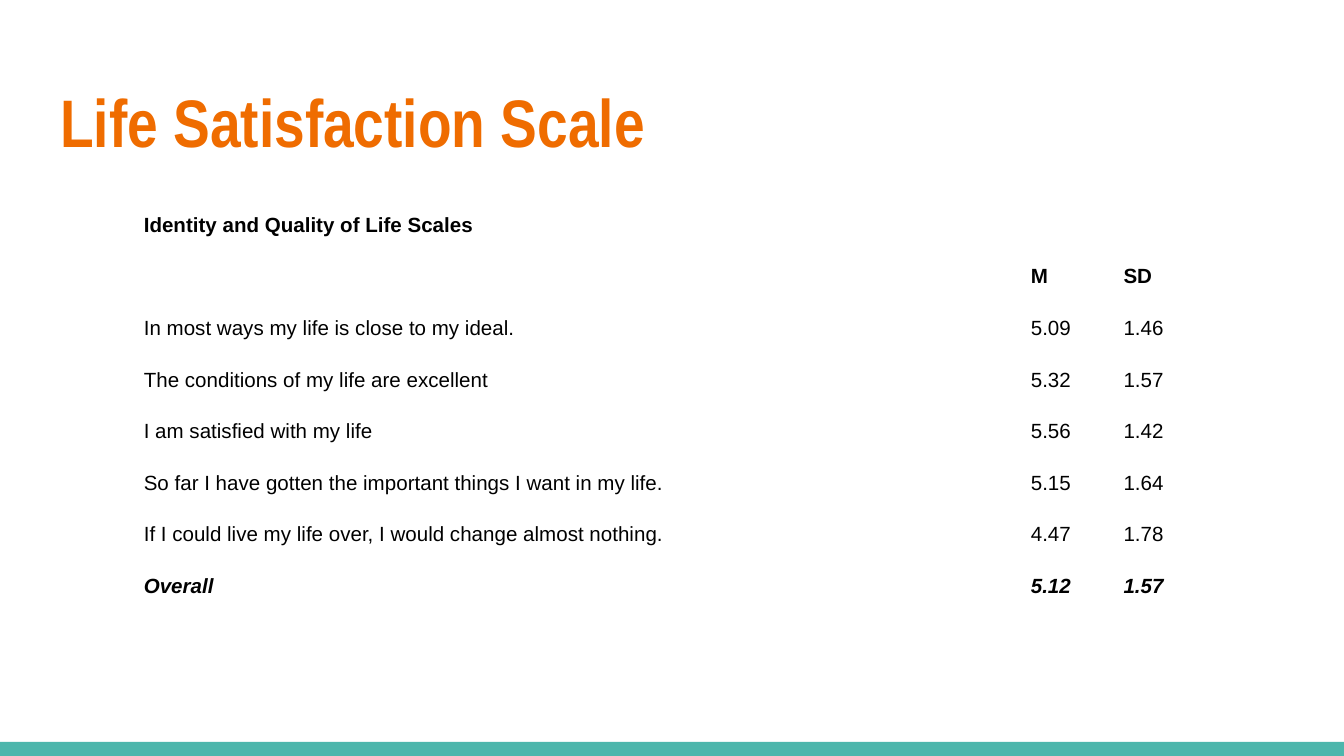
from pptx import Presentation
from pptx.dml.color import RGBColor
from pptx.enum.shapes import MSO_SHAPE as SHAPE
from pptx.enum.text import MSO_ANCHOR as ANCHOR
from pptx.util import Inches, Pt

ORANGE, TEAL, BLACK = "EF6C00", "4DB6AC", "000000"
SIDES = ("left", "top", "right", "bottom")
COLUMN_WIDTHS = (6.6, 0.69, 0.69)
ROW_HEIGHT = 0.27
SCALE_ROWS = [
    ("Identity and Quality of Life Scales", "", ""),
    ("", "M", "SD"),
    ("In most ways my life is close to my ideal.", "5.09", "1.46"),
    ("The conditions of my life are excellent", "5.32", "1.57"),
    ("I am satisfied with my life", "5.56", "1.42"),
    ("So far I have gotten the important things I want in my life.", "5.15", "1.64"),
    ("If I could live my life over, I would change almost nothing.", "4.47", "1.78"),
    ("Overall", "5.12", "1.57"),
]


def rgb(value):
    """Return the colour for a hex string."""
    return RGBColor.from_string(value)


def set_margins(target, size):
    """Give a cell or text frame the same margin on all sides."""
    for side in SIDES:
        setattr(target, f"margin_{side}", Inches(size))


def write(tf, text, color, **formats):
    """Write one formatted run into a text frame."""
    r = tf.paragraphs[0].add_run()
    r.text = text
    r.font.color.rgb = rgb(color)
    for name, value in formats.items():
        setattr(r.font, name, value)


def add_footer_bar(s, x, y, w, h):
    """Draw the coloured bar along the bottom edge."""
    sp = s.shapes.add_shape(SHAPE.RECTANGLE, *map(Inches, (x, y, w, h)))
    sp.shadow.inherit = False
    sp.fill.solid()
    sp.fill.fore_color.rgb = rgb(TEAL)
    sp.line.fill.background()


def add_title(s, x, y, w, h):
    """Place the slide title."""
    tf = s.shapes.add_textbox(*map(Inches, (x, y, w, h))).text_frame
    tf.word_wrap = True
    tf.vertical_anchor = ANCHOR.TOP
    set_margins(tf, 0.1)
    write(tf, "Life Satisfaction Scale", ORANGE, name="Arial Narrow", size=Pt(36), bold=True)


def add_scale_table(s, x, y):
    """Build the table of scale items with means and deviations."""
    size = (sum(COLUMN_WIDTHS), ROW_HEIGHT * len(SCALE_ROWS))
    frame = s.shapes.add_table(len(SCALE_ROWS), len(COLUMN_WIDTHS), *map(Inches, (x, y, *size)))
    table = frame.table
    table.first_row = table.horz_banding = False
    for column, width in zip(table.columns, COLUMN_WIDTHS):
        column.width = Inches(width)
    last = len(SCALE_ROWS) - 1
    for i, values in enumerate(SCALE_ROWS):
        table.rows[i].height = Inches(ROW_HEIGHT)
        for j, text in enumerate(values):
            cell = table.cell(i, j)
            cell.fill.background()
            set_margins(cell, 0.1 if text else 0)
            if text:
                write(cell.text_frame, text, BLACK, name="Arial", size=Pt(11),
                      bold=i in (0, 1, last), italic=i == last)


def main():
    """Build and save the slide."""
    prs = Presentation()
    prs.slide_width = Inches(10)
    prs.slide_height = prs.slide_width * 9 // 16
    s = prs.slides.add_slide(prs.slide_layouts[6])
    add_footer_bar(s, 0, 5.52, 10, 0.11)
    add_title(s, 0.35, 0.5, 9.32, 0.77)
    add_scale_table(s, 0.97, 1.49)
    prs.save("out.pptx")


if __name__ == "__main__":
    main()
